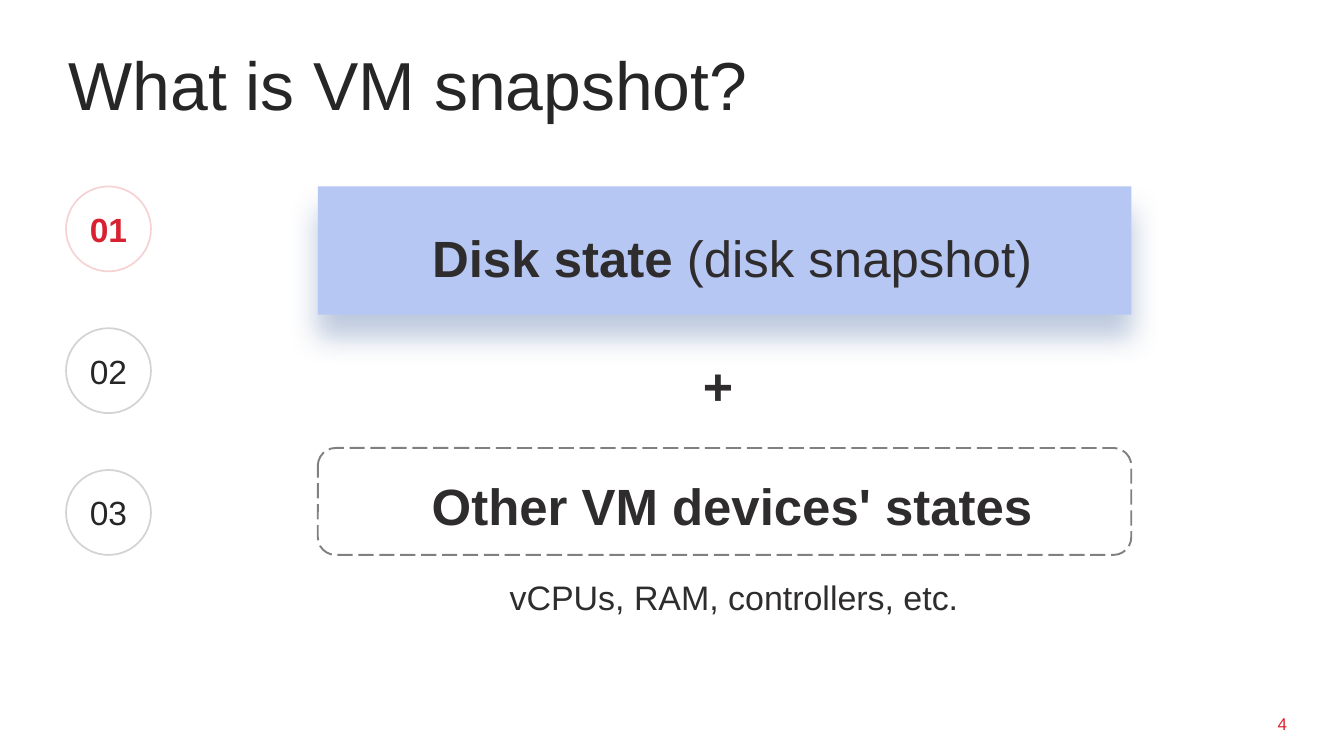
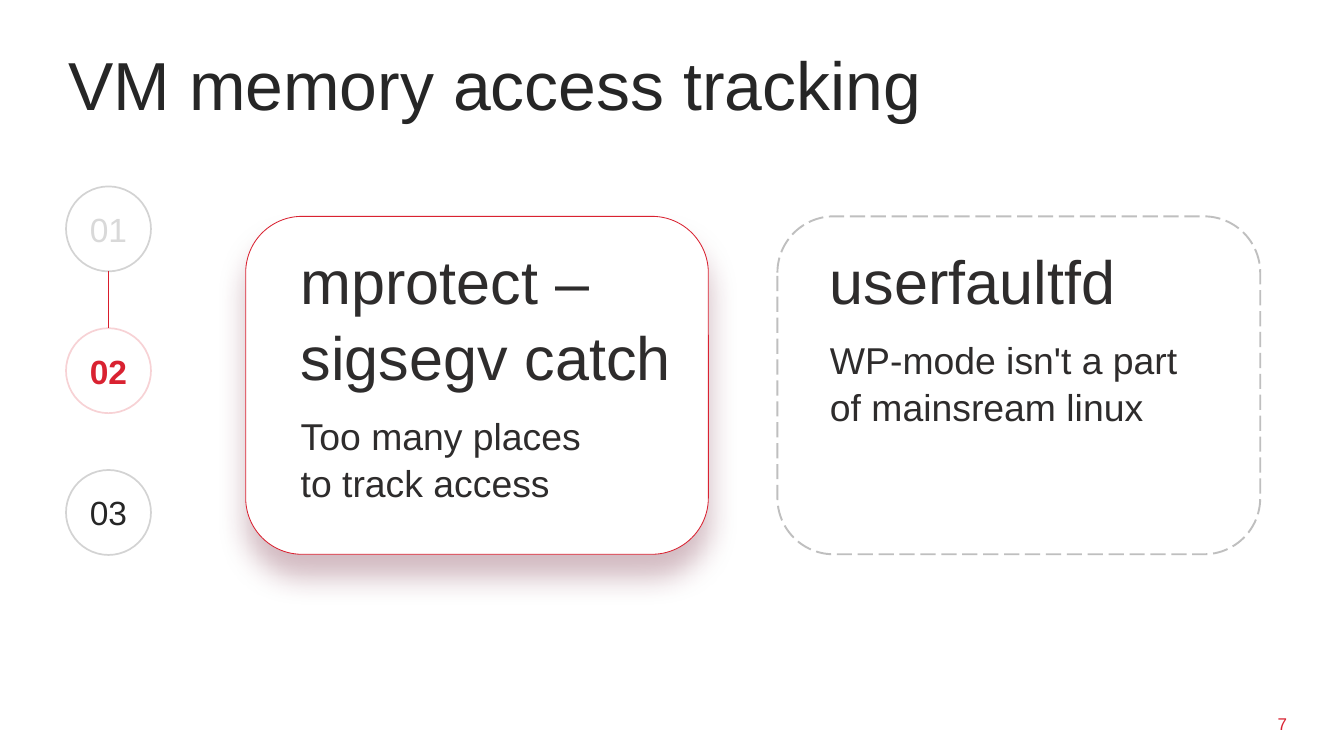
import lxml.etree
import pptx
import pptx.dml.color
import pptx.enum.dml
import pptx.enum.shapes
import pptx.enum.text
import pptx.oxml.ns
import pptx.util

PX = 9144  # one hundredth of an inch
FONT = "Arial"
RED, DARK, INK, PALE, WHITE = "D92231", "262626", "2E2C2C", "D9D9D9", "FFFFFF"
RING_LEFT, RING_TOP, RING_SIZE, RING_STEP = 108, 305, 139, 232
ALIGN = pptx.enum.text.PP_ALIGN
ANCHOR = pptx.enum.text.MSO_ANCHOR
SHAPE = pptx.enum.shapes.MSO_SHAPE
TWO_CONTENT = 3


def px(*lengths):
    return [pptx.util.Emu(n * PX) for n in lengths]


def rgb(color):
    return pptx.dml.color.RGBColor.from_string(color)


def add_xml(parent, tag, **attributes):
    child = lxml.etree.SubElement(parent, pptx.oxml.ns.qn(tag))
    for name, value in attributes.items():
        child.set(name, str(value))
    return child


def add_shadow(s, color):
    """Give the shape a soft shadow that falls straight down."""
    s.shadow.inherit = False
    effects = s._element.spPr.find(pptx.oxml.ns.qn("a:effectLst"))
    shadow = add_xml(effects, "a:outerShdw", blurRad=pptx.util.Pt(34),
                     dist=pptx.util.Pt(26), dir=5400000, algn="t", rotWithShape=0)
    add_xml(add_xml(shadow, "a:srgbClr", val=color), "a:alpha", val=30000)


def add_shape(slide, kind, box, fill=None, line=None, width=1, dashed=False, shadow=None):
    s = slide.shapes.add_shape(kind, *px(*box))
    s.shadow.inherit = False
    if fill:
        s.fill.solid()
        s.fill.fore_color.rgb = rgb(fill)
    else:
        s.fill.background()
    if line:
        s.line.color.rgb = rgb(line)
        s.line.width = pptx.util.Pt(width)
    else:
        s.line.fill.background()
    if dashed:
        s.line.dash_style = pptx.enum.dml.MSO_LINE.LONG_DASH
    if shadow:
        add_shadow(s, shadow)
    return s


def place(s, box):
    """Position a text shape and bring it in front of what is already drawn."""
    s.left, s.top, s.width, s.height = px(*box)
    s._element.getparent().append(s._element)


def style_run(r, size, color, bold=False):
    r.font.name = FONT
    r.font.size = pptx.util.Pt(size)
    r.font.bold = bold
    r.font.color.rgb = rgb(color)


def setup_frame(tf, anchor=ANCHOR.TOP, inset_x=20, inset_y=10):
    tf.word_wrap = True
    tf.auto_size = pptx.enum.text.MSO_AUTO_SIZE.NONE
    tf.vertical_anchor = anchor
    tf.margin_left, tf.margin_right = px(inset_x, inset_x)
    tf.margin_top, tf.margin_bottom = px(inset_y, inset_y)


def fill_text(s, paragraphs, align=ALIGN.LEFT, indent=25, spacing=1.04):
    """Write paragraphs, each a list of (text, size, bold) parts."""
    tf = s.text_frame
    setup_frame(tf)
    for i, parts in enumerate(paragraphs):
        p = tf.add_paragraph() if i else tf.paragraphs[0]
        p.alignment = align
        p.line_spacing = spacing
        p.space_before = pptx.util.Pt(16.3 if i else 0)
        p.space_after = pptx.util.Pt(6)
        pPr = p._p.get_or_add_pPr()
        pPr.set("marL", str(indent * PX))
        pPr.set("indent", "0")
        add_xml(pPr, "a:buNone")
        for text, size, bold in parts:
            for n, row in enumerate(text.split("\n")):
                if n:
                    p.add_line_break()
                r = p.add_run()
                r.text = row
                style_run(r, size, INK, bold)


def add_text(slide, box, paragraphs, **layout):
    s = slide.shapes.add_textbox(*px(*box))
    fill_text(s, paragraphs, **layout)


def fill_body(slide, index, box, paragraphs, **layout):
    s = slide.placeholders[index]
    place(s, box)
    fill_text(s, paragraphs, **layout)


def add_label(s, text, size, color, bold, align):
    """Write one vertically centred line without insets."""
    tf = s.text_frame
    tf.text = text
    setup_frame(tf, ANCHOR.MIDDLE, 0, 0)
    p = tf.paragraphs[0]
    p.alignment = align
    style_run(p.runs[0], size, color, bold)


def add_slide(prs, title, number):
    slide = prs.slides.add_slide(prs.slide_layouts[TWO_CONTENT])
    s = slide.shapes.title
    place(s, (92, 55, 2014, 153))
    s.text_frame.text = title
    setup_frame(s.text_frame)
    p = s.text_frame.paragraphs[0]
    p.alignment = ALIGN.LEFT
    p.line_spacing = 1.04
    style_run(p.runs[0], 80, DARK)
    s = slide.shapes.add_textbox(*px(1856, 1167, 250, 35))
    add_label(s, number, 20, RED, False, ALIGN.RIGHT)
    return slide


def add_steps(slide, current):
    """Draw the numbered rings: earlier steps pale, the current one red."""
    for step in range(1, 4):
        top = RING_TOP + (step - 1) * RING_STEP
        active = step == current
        s = add_shape(slide, SHAPE.OVAL, (RING_LEFT, top, RING_SIZE, RING_SIZE),
                      WHITE, RED if active else DARK, 2)
        line_color = s.line._ln.find(".//" + pptx.oxml.ns.qn("a:srgbClr"))
        add_xml(line_color, "a:alpha", val=20000)
        color = RED if active else PALE if step < current else DARK
        add_label(s, f"{step:02}", 39.5, color, active, ALIGN.CENTER)
        if step < current:
            add_step_link(slide, top + RING_SIZE, top + RING_STEP)


def add_step_link(slide, top, bottom):
    x = RING_LEFT + RING_SIZE // 2
    s = slide.shapes.add_connector(pptx.enum.shapes.MSO_CONNECTOR.STRAIGHT,
                                   *px(x, top, x, bottom))
    s.line.color.rgb = rgb("D91D2C")
    s.line.width = pptx.util.Pt(0.75)
    add_xml(s._element.spPr, "a:effectLst")


def remove_empty_placeholders(slide):
    for s in list(slide.placeholders):
        if not s.text_frame.text:
            s._element.getparent().remove(s._element)


def add_snapshot_slide(prs):
    slide = add_slide(prs, "What is VM snapshot?", "4")
    add_steps(slide, 1)
    left, width = 520, 1331
    center = ALIGN.CENTER
    add_shape(slide, SHAPE.RECTANGLE, (left, 305, width, 210), "B6C7F4", shadow="254D90")
    add_shape(slide, SHAPE.ROUNDED_RECTANGLE, (left, 733, width, 175),
              line="808080", width=2.25, dashed=True)
    fill_body(slide, 1, (left, 357, width, 159),
              [[("Disk state", 60, True), (" (disk snapshot)", 60, False)]], align=center)
    add_text(slide, (499, 588, 1352, 102), [[("+", 61.2, True)]],
             align=center, indent=0, spacing=0.8)
    add_text(slide, (left, 762, width, 159),
             [[("Other VM devices' states", 60, True)]], align=center)
    add_text(slide, (left, 931, 1337, 98),
             [[("vCPUs, RAM, controllers, etc.", 40, False)]], align=center)
    remove_empty_placeholders(slide)


def add_tracking_slide(prs):
    slide = add_slide(prs, "VM memory access tracking", "7")
    add_steps(slide, 2)
    top, height = 354, 553
    add_shape(slide, SHAPE.ROUNDED_RECTANGLE, (402, top, 757, height),
              WHITE, RED, shadow="6C1C34")
    add_shape(slide, SHAPE.ROUNDED_RECTANGLE, (1272, top, 790, height),
              line="BFBFBF", width=2.25, dashed=True)
    cards = [(447, "mprotect – sigsegv catch", "Too many places\nto track access"),
             (1313, "userfaultfd", "WP-mode isn't a part\nof mainsream linux")]
    for index, (left, heading, detail) in enumerate(cards, 1):
        fill_body(slide, index, (left, 383, 729, 494),
                  [[(heading, 72, False)], [(detail, 44, False)]])


def main():
    prs = pptx.Presentation()
    prs.slide_width, prs.slide_height = px(2199, 1237)
    add_snapshot_slide(prs)
    add_tracking_slide(prs)
    prs.save("out.pptx")


if __name__ == "__main__":
    main()
